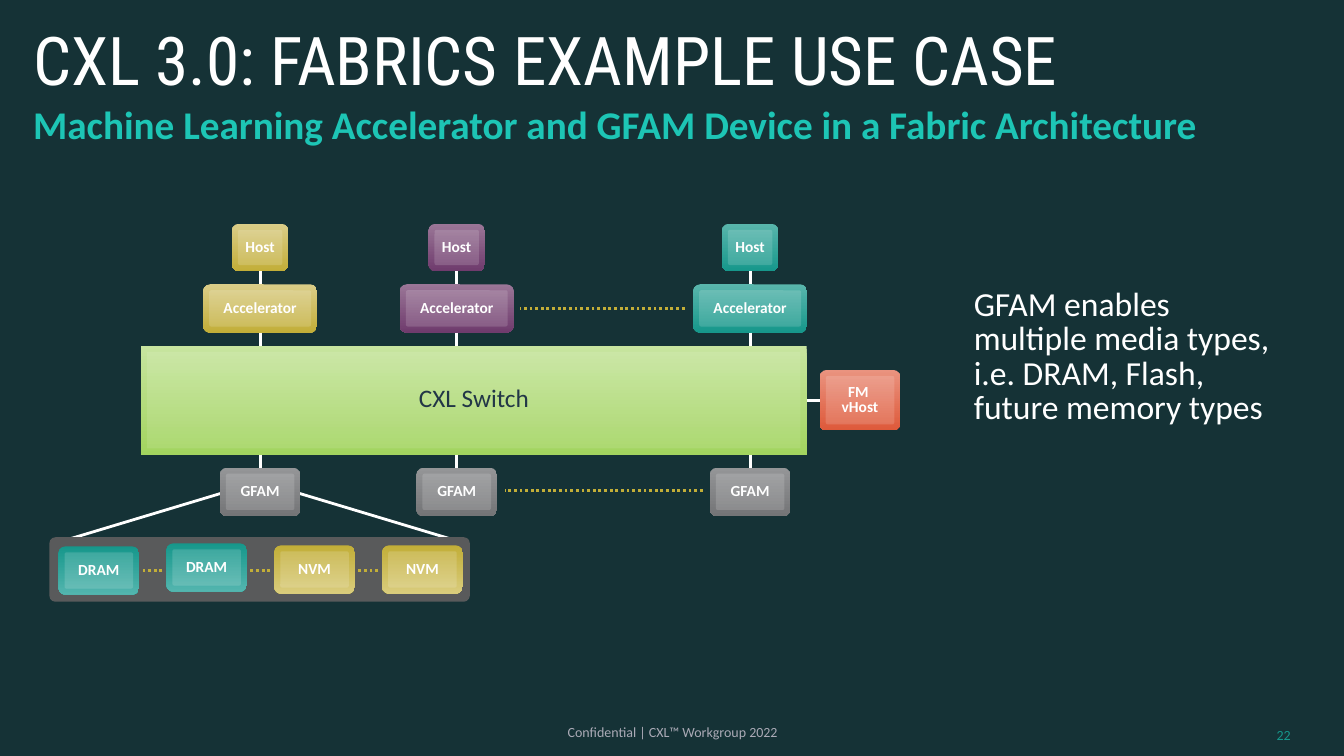
from lxml import etree
from pptx import Presentation, util as u
from pptx.dml.color import RGBColor
from pptx.enum import dml, shapes, text
from pptx.oxml.ns import qn

COLOURS = {
    "background": "153236", "white": "FFFFFF", "heading": "1DC5B5", "footer": "AAAAB6",
    "number": "16978B", "switch text": "223647", "tray": "595A5B", "dots": "C2AE38",
}
# Top and bottom colour of each kind of block
SHADES = {
    "gold": ("DACD88", "C2AE38"), "purple": ("9A7697", "6F3B6D"), "teal": ("59B6AC", "16978B"),
    "grey": ("949597", "747577"), "orange": ("EA937F", "DE593A"), "switch": ("C7E59F", "A2D45F"),
    "DRAM": ("16978B", "53B5AE"), "NVM": ("C2AE38", "D9CC7C"),
}
# text, left, top, width, height, size, font, colour, bold, line spacing, alignment, anchor, left inset
LEFT, CENTER, RIGHT = text.PP_ALIGN.LEFT, text.PP_ALIGN.CENTER, text.PP_ALIGN.RIGHT
TOP, MIDDLE = text.MSO_ANCHOR.TOP, text.MSO_ANCHOR.MIDDLE
TEXTS = [
    ("CXL 3.0: FABRICS EXAMPLE USE CASE", 0.23, 0.22, 12.03, 0.62,
     48, "Roboto Condensed", "white", False, 0.9, LEFT, TOP, 0.1),
    ("Machine Learning Accelerator and GFAM Device in a Fabric Architecture", 0.23, 1.02, 12.88, 0.73,
     28, "Calibri", "heading", True, 0.85, LEFT, TOP, 0.1),
    ("GFAM enables multiple media types, i.e. DRAM, Flash, future memory types", 9.56, 2.82, 3.26, 1.82,
     24, "Calibri", "white", False, 0.85, LEFT, TOP, 0.1),
    ("Confidential | CXL™ Workgroup 2022", 2.82, 7.13, 7.57, 0.26,
     10, "Calibri", "footer", False, 1.0, CENTER, MIDDLE, 0.23),
    ("22", 12.23, 7.09, 0.67, 0.4, 10, "Calibri", "number", False, 1.0, RIGHT, MIDDLE, 0.1),
]
COLUMNS = [(2.58, "gold"), (4.53, "purple"), (7.44, "teal")]  # centre, shade
MEDIA = [("DRAM", 5.42), ("DRAM", 5.39), ("NVM", 5.41), ("NVM", 5.41)]  # label, top
MEDIA_LEFT, MEDIA_PITCH = 0.58, 1.07
SWITCH = (1.4, 3.43, 6.6, 1.08)
TRAY = (0.49, 5.33, 4.17, 0.64)
HOST_TOP, ACCELERATOR_TOP, GFAM_TOP = 2.22, 2.82, 4.64
HOST_SIZE, ACCELERATOR_SIZE, GFAM_SIZE = (0.56, 0.47), (1.13, 0.48), (0.8, 0.48)
BORDER = 0.06

deck = Presentation()
deck.slide_width, deck.slide_height = u.Inches(13.33), u.Inches(7.5)
page = deck.slides.add_slide(deck.slide_layouts[6])
page.background.fill.solid()
page.background.fill.fore_color.rgb = RGBColor.from_string(COLOURS["background"])


def write(frame, words, size, font, colour, bold, spacing, align, anchor):
    frame.word_wrap = True
    frame.vertical_anchor = anchor
    para = frame.paragraphs[0]
    para.text = words
    para.alignment = align
    para.line_spacing = spacing
    for span in para.runs:
        span.font.size = u.Pt(size)
        span.font.name = font
        span.font.bold = bold
        span.font.color.rgb = RGBColor.from_string(COLOURS[colour])


def add_box(left, top, width, height, radius=0):
    kind = shapes.MSO_SHAPE.ROUNDED_RECTANGLE if radius else shapes.MSO_SHAPE.RECTANGLE
    box = page.shapes.add_shape(kind, *map(u.Inches, (left, top, width, height)))
    if radius:
        box.adjustments[0] = radius / min(width, height)
    box.shadow.inherit = False
    box.line.fill.background()
    return box


def fill_solid(box, colour):
    box.fill.solid()
    box.fill.fore_color.rgb = RGBColor.from_string(COLOURS[colour])


def add_block(label, shade, left, top, width, height, rounded=True, size=11, colour="white"):
    """Draw a shaded block with a paler, labelled panel inside; return the outer box."""
    box = add_box(left, top, width, height, 0.07 if rounded else 0)
    box.fill.gradient()
    box.fill.gradient_angle = 270
    for stop, hue in zip(box.fill.gradient_stops, SHADES[shade]):
        stop.color.rgb = RGBColor.from_string(hue)
    panel = add_box(left + BORDER, top + BORDER, width - 2 * BORDER, height - 2 * BORDER,
                    0.02 if rounded else 0)
    fill_solid(panel, "white")
    tint = panel.fill._xPr.find(".//" + qn("a:srgbClr"))
    etree.SubElement(tint, qn("a:alpha")).set("val", "15000" if rounded else "10000")
    frame = panel.text_frame
    frame.margin_left = frame.margin_right = 0
    frame.margin_top = frame.margin_bottom = 0
    write(frame, label, size, "Calibri", colour, rounded, 0.85, CENTER, MIDDLE)
    return box


def add_line(x1, y1, x2, y2, colour="white", dotted=False):
    line = page.shapes.add_connector(shapes.MSO_CONNECTOR.STRAIGHT, *map(u.Inches, (x1, y1, x2, y2)))
    line.line.color.rgb = RGBColor.from_string(COLOURS[colour])
    line.line.width = u.Pt(2)
    if dotted:
        line.line.dash_style = dml.MSO_LINE.ROUND_DOT
    etree.SubElement(line._element.spPr, qn("a:effectLst"))
    return line


def add_centred_block(label, shade, centre, top, size):
    return add_block(label, shade, centre - size[0] / 2, top, *size)


# Lines that open the first GFAM device out to its media tray
first_centre = COLUMNS[0][0]
for side in (1, -1):
    add_line(first_centre + side * 0.34, 4.88, first_centre + side * 2, 5.38)
fill_solid(add_box(*TRAY, radius=0.06), "tray")

for words, left, top, width, height, *style, inset in TEXTS:
    box = page.shapes.add_textbox(*map(u.Inches, (left, top, width, height)))
    box.text_frame.margin_left = u.Inches(inset)
    write(box.text_frame, words, *style)

switch = add_block("CXL Switch", "switch", *SWITCH, rounded=False, size=18, colour="switch text")
switch_top, switch_bottom = SWITCH[1], SWITCH[1] + SWITCH[3]

for centre, shade in COLUMNS:
    host = add_centred_block("Host", shade, centre, HOST_TOP, HOST_SIZE)
    accelerator = add_centred_block("Accelerator", shade, centre, ACCELERATOR_TOP, ACCELERATOR_SIZE)
    gfam = add_centred_block("GFAM", "grey", centre, GFAM_TOP, GFAM_SIZE)
    link = add_line(centre, HOST_TOP + HOST_SIZE[1], centre, ACCELERATOR_TOP)
    link.begin_connect(host, 2)
    link.end_connect(accelerator, 0)
    link = add_line(centre, ACCELERATOR_TOP + ACCELERATOR_SIZE[1], centre, switch_top)
    link.begin_connect(accelerator, 2)
    link = add_line(centre, switch_bottom, centre, GFAM_TOP)
    link.end_connect(gfam, 0)

manager = add_block("FM \vvHost", "orange", 8.13, 3.67, 0.8, 0.6)
link = add_line(8, 3.97, 8.13, 3.97)
link.begin_connect(switch, 3)
link.end_connect(manager, 1)

for i, (label, top) in enumerate(MEDIA):
    left = MEDIA_LEFT + i * MEDIA_PITCH
    add_block(label, label, left, top, *GFAM_SIZE)
    if i:
        add_line(left - 0.04, 5.66, left - 0.24, 5.66, "dots", dotted=True)

add_line(6.97, 4.87, 5.01, 4.87, "dots", dotted=True)
add_line(6.79, 3.06, 5.16, 3.06, "dots", dotted=True)

deck.save("out.pptx")
